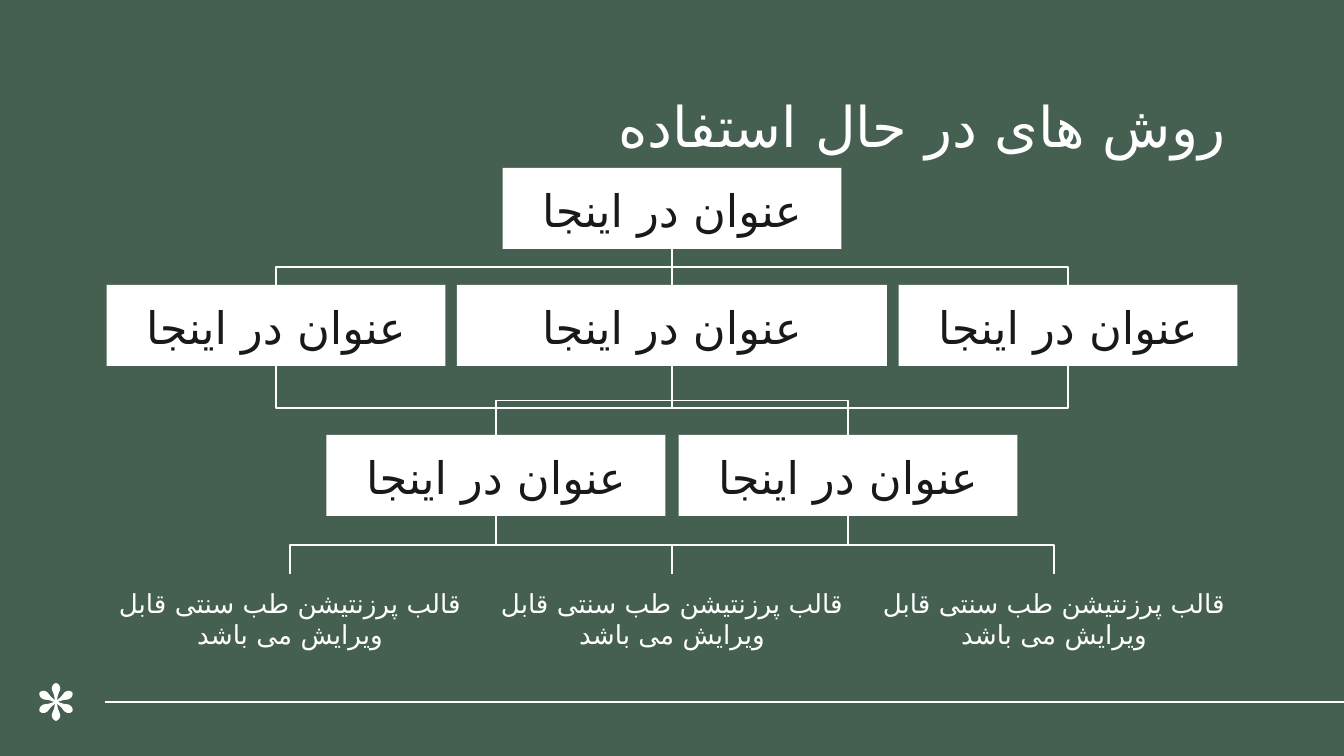
import math
from dataclasses import dataclass

from lxml import etree
from pptx import Presentation
from pptx.dml.color import RGBColor
from pptx.enum.shapes import MSO_CONNECTOR, MSO_SHAPE
from pptx.enum.text import MSO_ANCHOR, PP_ALIGN
from pptx.oxml.ns import qn
from pptx.util import Emu, Pt

RECT = MSO_SHAPE.RECTANGLE
STRAIGHT, ELBOW = MSO_CONNECTOR.STRAIGHT, MSO_CONNECTOR.ELBOW
TOP, BOTTOM = MSO_ANCHOR.TOP, MSO_ANCHOR.BOTTOM
CENTER, RIGHT = PP_ALIGN.CENTER, PP_ALIGN.RIGHT

GREEN = RGBColor(0x45, 0x5F, 0x51)
WHITE = RGBColor(0xFF, 0xFF, 0xFF)
INK = RGBColor(0x19, 0x19, 0x19)

EMU_PER_PX = 914400 / 134.4
SLIDE_W, SLIDE_H = 1344, 756
MID = SLIDE_W // 2
INSET = 13
BOX_H = 81
BOX_W, WIDE_BOX_W = 339, 430
ROW_1, ROW_2, ROW_3 = 168, 285, 435
SIDE, PAIR, CAPTION_STEP = 396, 176, 382
CAPTION_TOP, CAPTION_W, CAPTION_H = 574, 370, 58
BRACKET_SPAN = 600  # EMU: a nearly flat connector that hangs below its ends
BRACKET_ADJ = 39687500

ARABIC_FONT = "DejaVu Sans"  # carries the Persian letters
HEADING = "عنوان در اینجا"
CAPTION = "قالب پرزنتیشن طب سنتی قابل ویرایش می باشد"


@dataclass(frozen=True)
class Box:
    center: int
    top: int
    width: int = BOX_W


@dataclass(frozen=True)
class Link:
    x1: int
    y1: int
    x2: int
    y2: int


BOXES = [
    Box(MID, ROW_1),
    Box(MID, ROW_2, WIDE_BOX_W),
    Box(MID - SIDE, ROW_2),
    Box(MID + SIDE, ROW_2),
    Box(MID - PAIR, ROW_3),
    Box(MID + PAIR, ROW_3),
]
LINKS = [Link(MID, ROW_1 + BOX_H, MID + dx, ROW_2) for dx in (0, -SIDE, SIDE)]
LINKS += [Link(MID, ROW_2 + BOX_H, MID + dx, ROW_2 + BOX_H) for dx in (-SIDE, SIDE)]
LINKS += [Link(MID, ROW_2 + BOX_H, MID + dx, ROW_3) for dx in (-PAIR, PAIR)]
LINKS += [
    Link(MID + side * PAIR, ROW_3 + BOX_H, MID + side * dx, CAPTION_TOP)
    for side in (-1, 1)
    for dx in (0, CAPTION_STEP)
]


def px(value: float) -> Emu:
    return Emu(round(value * EMU_PER_PX))


def add_text(sp, text: str, *, size: int, font: str, color: RGBColor,
             align=CENTER, anchor=TOP, top_inset: int = INSET) -> None:
    """Fill a shape with one right-to-left paragraph."""
    tf = sp.text_frame
    tf.word_wrap = True
    tf.vertical_anchor = anchor
    tf.margin_left = tf.margin_right = tf.margin_bottom = px(INSET)
    tf.margin_top = px(top_inset)
    p = tf.paragraphs[0]
    p.alignment = align
    p._p.get_or_add_pPr().set("rtl", "1")
    r = p.add_run()
    r.text = text
    r.font.size = Pt(size)
    r.font.name = font
    r.font.color.rgb = color
    r_pr = r._r.get_or_add_rPr()
    r_pr.set("lang", "fa-IR")
    etree.SubElement(r_pr, qn("a:cs")).set("typeface", ARABIC_FONT)


def add_box(s, box: Box) -> None:
    sp = s.shapes.add_shape(RECT, px(box.center - box.width / 2), px(box.top),
                            px(box.width), px(BOX_H))
    sp.shadow.inherit = False
    sp.fill.solid()
    sp.fill.fore_color.rgb = WHITE
    sp.line.fill.background()
    add_text(sp, HEADING, size=24, font="Calibri", color=INK,
             anchor=BOTTOM, top_inset=0)


def add_line(s, kind, link: Link):
    line = s.shapes.add_connector(kind, px(link.x1), px(link.y1),
                                  px(link.x2), px(link.y2))
    line.line.color.rgb = WHITE
    line.line.width = Pt(0.75)
    etree.SubElement(line._element.spPr, qn("a:effectLst"))
    return line


def add_elbow(s, link: Link) -> None:
    """Draw a bent link that leaves and arrives vertically."""
    line = add_line(s, ELBOW, link)
    flat = link.y1 == link.y2
    span = BRACKET_SPAN if flat else px(link.y2 - link.y1)
    reach = px(abs(link.x2 - link.x1))
    line.left = Emu(px((link.x1 + link.x2) / 2) - span // 2)
    line.top = Emu(px((link.y1 + link.y2) / 2) - reach // 2)
    line.width, line.height = Emu(span), reach
    xfrm = line._element.spPr.find(qn("a:xfrm"))
    xfrm.attrib.pop("flipH", None)
    if link.x2 < link.x1:
        xfrm.set("rot", "5400000")
    else:
        xfrm.set("rot", "16200000")
        xfrm.set("flipH", "1")
    if flat:
        guides = line._element.spPr.find(qn("a:prstGeom")).find(qn("a:avLst"))
        guide = etree.SubElement(guides, qn("a:gd"))
        guide.set("name", "adj1")
        guide.set("fmla", f"val {BRACKET_ADJ}")


def add_asterisk(s, cx: int, cy: int) -> None:
    """Draw six rounded petals around a centre."""
    half = [(2, 1), (7, 2), (12, 4), (15, 4), (17, 3), (18, 2), (19, 0)]
    petal = half + [(along, -across) for along, across in half[-2::-1]]
    points = []
    for i in range(6):
        a = math.radians(60 * i - 90)
        points += [
            (px(cx + u * math.cos(a) + v * math.sin(a)),
             px(cy + u * math.sin(a) - v * math.cos(a)))
            for u, v in petal
        ]
    builder = s.shapes.build_freeform(*points[0])
    builder.add_line_segments(points[1:], close=True)
    sp = builder.convert_to_shape()
    sp.shadow.inherit = False
    sp.fill.solid()
    sp.fill.fore_color.rgb = WHITE
    sp.line.fill.background()


def add_textbox(s, x: int, y: int, w: int, h: int, text: str, **style) -> None:
    sp = s.shapes.add_textbox(px(x), px(y), px(w), px(h))
    add_text(sp, text, color=WHITE, **style)


def main() -> None:
    prs = Presentation()
    prs.slide_width, prs.slide_height = px(SLIDE_W), px(SLIDE_H)
    s = prs.slides.add_slide(prs.slide_layouts[6])
    s.background.fill.solid()
    s.background.fill.fore_color.rgb = GREEN

    add_line(s, STRAIGHT, Link(105, 702, SLIDE_W, 702))
    add_asterisk(s, 56, 702)
    add_textbox(s, 106, 79, 1133, 85, "روش های در حال استفاده",
                size=30, font="Calibri", align=RIGHT)
    for box in BOXES:
        add_box(s, box)
    for link in LINKS:
        add_elbow(s, link)
    for i in (-1, 0, 1):
        add_textbox(s, MID + i * CAPTION_STEP - CAPTION_W // 2, CAPTION_TOP,
                    CAPTION_W, CAPTION_H, CAPTION, size=14, font="Roboto")
    prs.save("out.pptx")


if __name__ == "__main__":
    main()
